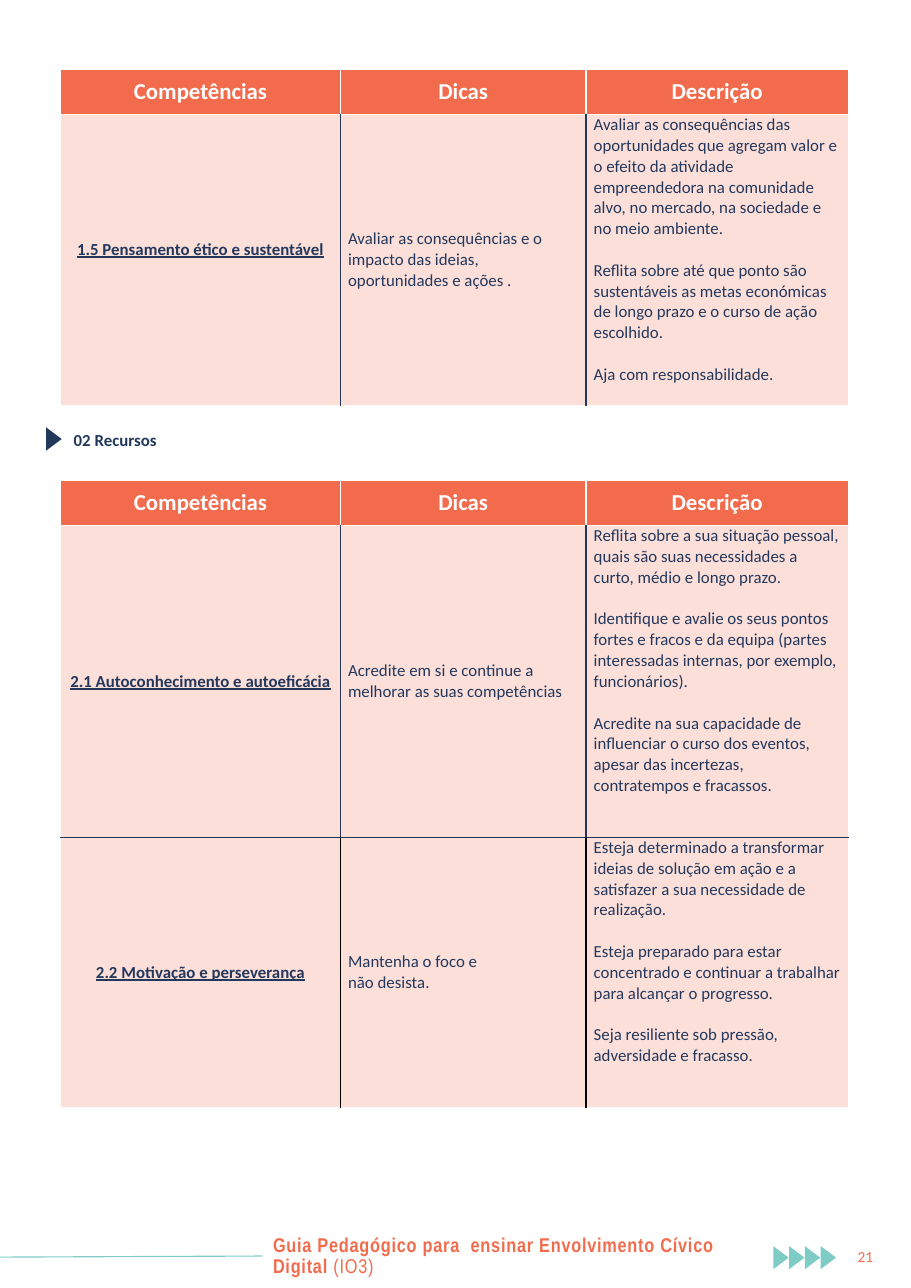
from lxml import etree
from pptx import Presentation
from pptx.dml.color import RGBColor
from pptx.enum.shapes import MSO_CONNECTOR
from pptx.enum.text import MSO_ANCHOR, PP_ALIGN
from pptx.oxml.ns import qn
from pptx.util import Inches, Pt

STRAIGHT = MSO_CONNECTOR.STRAIGHT
MIDDLE, TOP = MSO_ANCHOR.MIDDLE, MSO_ANCHOR.TOP
LEFT, CENTER, JUSTIFY = PP_ALIGN.LEFT, PP_ALIGN.CENTER, PP_ALIGN.JUSTIFY

ORANGE, TEAL, NAVY = "F26B4D", "7FCCC7", "22385A"
INK, WHITE, BLACK = "23385C", "FFFFFF", "000000"

HEADERS = ["Competências", "Dicas", "Descrição"]
COL_WIDTHS = [2.54, 2.23, 2.38]
HEADER_HEIGHT = 0.41
LINE = 0.19  # height of one line of body text

# Each row: height, colour of its column rules, skill, tip, description
ETHICS = [
    (2.64, NAVY, "1.5 Pensamento ético e sustentável",
     "Avaliar as consequências e o impacto das ideias, oportunidades e ações .",
     ["Avaliar as consequências das oportunidades que agregam valor e o efeito da "
      "atividade empreendedora na comunidade alvo, no mercado, na sociedade e no "
      "meio ambiente.",
      "Reflita sobre até que ponto são sustentáveis as metas económicas de longo "
      "prazo e o curso de ação escolhido.",
      "Aja com responsabilidade."]),
]
RESOURCES = [
    (2.83, NAVY, "2.1 Autoconhecimento e autoeficácia",
     "Acredite em si e continue a melhorar as suas competências",
     ["Reflita sobre a sua situação pessoal, quais são suas necessidades a curto, "
      "médio e longo prazo.",
      "Identifique e avalie os seus pontos fortes e fracos e da equipa (partes "
      "interessadas internas, por exemplo, funcionários).",
      "Acredite na sua capacidade de influenciar o curso dos eventos, apesar das "
      "incertezas, contratempos e fracassos."]),
    (2.45, BLACK, "2.2 Motivação e perseverança",
     "Mantenha o foco e \vnão desista.",
     ["Esteja determinado a transformar ideias de solução em ação e a satisfazer a "
      "sua necessidade de realização.",
      "Esteja preparado para estar concentrado e continuar a trabalhar para "
      "alcançar o progresso.",
      "Seja resiliente sob pressão, adversidade e fracasso."]),
]


def rgb(value):
    return RGBColor.from_string(value)


def style(p, size, color, bold=False, align=LEFT, font="Calibri"):
    p.alignment = align
    p.font.name, p.font.size, p.font.bold = font, Pt(size), bold
    p.font.color.rgb = rgb(color)


def add_label(s, x, y, w, h, anchor=MIDDLE):
    tf = s.shapes.add_textbox(Inches(x), Inches(y), Inches(w), Inches(h)).text_frame
    tf.word_wrap = True
    tf.vertical_anchor = anchor
    return tf.paragraphs[0]


def add_triangle(s, x, y, color, w=0.14, h=0.21):
    builder = s.shapes.build_freeform(Inches(x + w), Inches(y + h / 2))
    builder.add_line_segments([(Inches(x), Inches(y)), (Inches(x), Inches(y + h))])
    sp = builder.convert_to_shape()
    sp.shadow.inherit = False
    sp.fill.solid()
    sp.fill.fore_color.rgb = rgb(color)
    sp.line.fill.background()


def add_rule(s, x1, y1, x2, y2, color):
    line = s.shapes.add_connector(STRAIGHT, Inches(x1), Inches(y1), Inches(x2), Inches(y2))
    line.line.color.rgb = rgb(color)
    line.line.width = Pt(0.75)
    etree.SubElement(line._element.spPr, qn("a:effectLst"))


def set_borders(cell, left, right, top, bottom):
    tc_pr = cell._tc.get_or_add_tcPr()
    sides = {"a:lnL": left, "a:lnR": right, "a:lnT": top, "a:lnB": bottom}
    for i, (tag, color) in enumerate(sides.items()):
        ln = etree.Element(qn(tag), w=str(Pt(1)))
        fill = etree.SubElement(ln, qn("a:solidFill"))
        etree.SubElement(fill, qn("a:srgbClr"), val=color)
        tc_pr.insert(i, ln)


def fill_cell(cell, paragraphs, anchor=MIDDLE, opacity=100):
    cell.margin_left = cell.margin_right = Inches(0.07)
    cell.margin_top = cell.margin_bottom = 0
    cell.vertical_anchor = anchor
    cell.fill.solid()
    cell.fill.fore_color.rgb = rgb(ORANGE)
    if opacity < 100:
        clr = cell._tc.tcPr.find(qn("a:solidFill"))[0]
        etree.SubElement(clr, qn("a:alpha"), val=str(opacity * 1000))
    cell.text = "\n".join(paragraphs)
    return cell.text_frame.paragraphs


def add_skills_table(s, y, rows):
    height = HEADER_HEIGHT + sum(row[0] for row in rows)
    table = s.shapes.add_table(len(rows) + 1, len(HEADERS), Inches(0.55), Inches(y),
                               Inches(sum(COL_WIDTHS)), Inches(height)).table
    table.horz_banding = False
    table.rows[0].height = Inches(HEADER_HEIGHT)

    # Header row
    for c, (title, width) in enumerate(zip(HEADERS, COL_WIDTHS)):
        table.columns[c].width = Inches(width)
        cell = table.cell(0, c)
        style(fill_cell(cell, [title])[0], 14.9, WHITE, True, CENTER)
        set_borders(cell, WHITE, WHITE, WHITE, WHITE)

    # Body rows
    for r, (row_height, rule, skill, tip, description) in enumerate(rows, 1):
        table.rows[r].height = Inches(row_height)
        for c, texts in enumerate([[skill], [tip], description]):
            cell = table.cell(r, c)
            is_skill, is_last = c == 0, c == len(HEADERS) - 1
            for p in fill_cell(cell, texts, TOP if is_last else MIDDLE, 21):
                style(p, 11, INK, is_skill, CENTER if is_skill else LEFT)
                p.font.underline = is_skill
            if is_last:
                for p in cell.text_frame.paragraphs[:-1]:
                    p.space_after = Inches(LINE)
            set_borders(cell, WHITE if is_skill else rule, WHITE if is_last else rule,
                        WHITE if r == 1 else NAVY, WHITE if r == len(rows) else NAVY)
    return table


def add_footer(s):
    p = add_label(s, 7.66, 11.26, 0.39, 0.29)
    p.text = "21"
    style(p, 10, ORANGE, align=CENTER)
    for i in range(4):
        add_triangle(s, 7.02 + i * 0.43 / 3, 11.31, TEAL)
    add_rule(s, 0, 11.41, 2.38, 11.4, TEAL)

    p = add_label(s, 2.38, 11.13, 4.72, 0.55)
    style(p, 13, ORANGE, font="Arial Narrow")
    p.line_spacing, p.space_before = 0.9, Pt(8.3)
    title = "Guia Pedagógico para  ensinar Envolvimento Cívico Digital "
    for text, bold in [(title, True), ("(IO3)", False)]:
        r = p.add_run()
        r.text, r.font.bold = text, bold
        r._r.get_or_add_rPr().set("spc", "50")


def add_section_heading(s, text):
    add_triangle(s, 0.42, 3.88, NAVY)
    p = add_label(s, 0.57, 3.87, 7.15, 0.55, TOP)
    p.text = text
    style(p, 11, NAVY, True, JUSTIFY)
    p.line_spacing, p.space_before = 0.9, Pt(8.3)


def main():
    prs = Presentation()
    prs.slide_width, prs.slide_height = Inches(8.27), Inches(11.69)
    s = prs.slides.add_slide(prs.slide_layouts[6])

    ethics = add_skills_table(s, 0.63, ETHICS)
    ethics.cell(1, 0).margin_bottom = Inches(LINE)  # raises the skill by half a line
    add_section_heading(s, "02 Recursos")
    add_skills_table(s, 4.36, RESOURCES)
    add_footer(s)

    prs.save("out.pptx")


if __name__ == "__main__":
    main()
